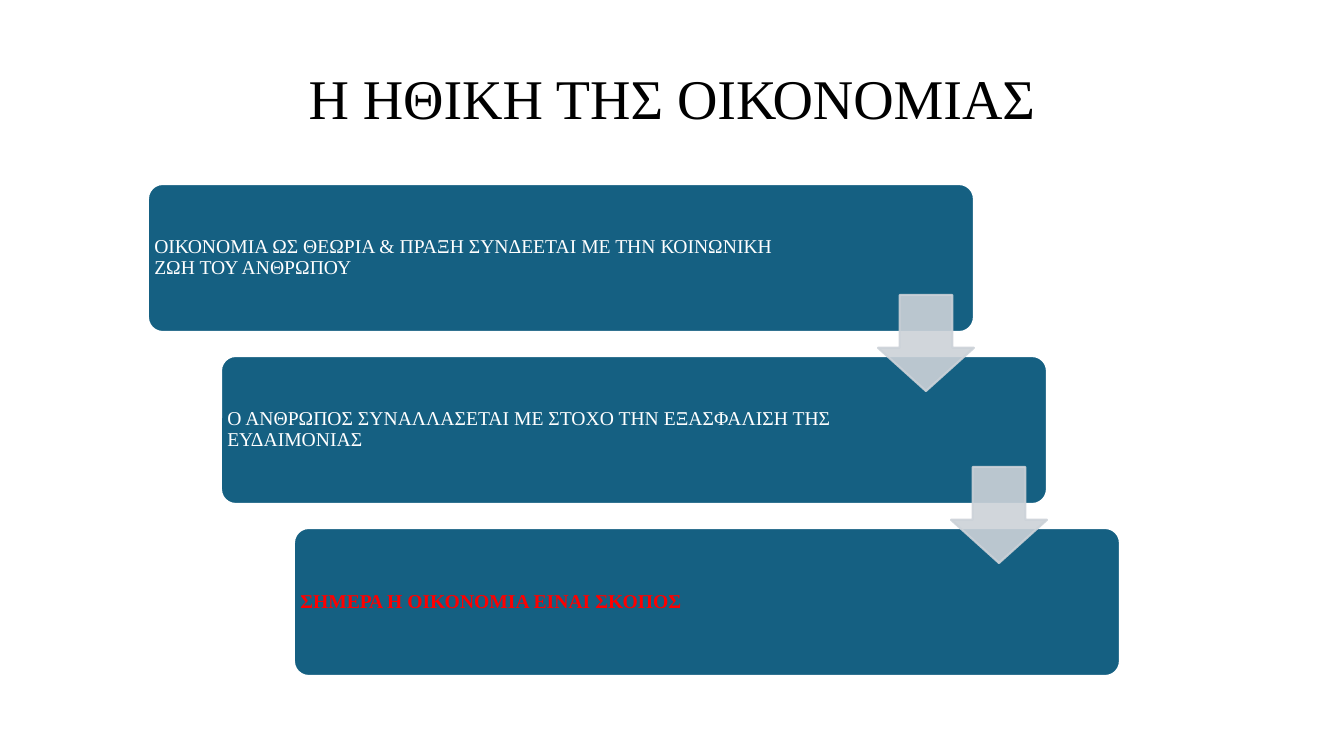
import pptx
import pptx.util
import pptx.dml.color
import pptx.enum.shapes
import pptx.enum.text
import pptx.oxml.ns
import lxml.etree

TITLE = "Η ΗΘΙΚΗ ΤΗΣ ΟΙΚΟΝΟΜΙΑΣ"
# text, colour, bold
STEPS = [
    ("ΟΙΚΟΝΟΜΙΑ ΩΣ ΘΕΩΡΙΑ & ΠΡΑΞΗ ΣΥΝΔΕΕΤΑΙ ΜΕ ΤΗΝ ΚΟΙΝΩΝΙΚΗ ΖΩΗ ΤΟΥ ΑΝΘΡΩΠΟΥ", "FFFFFF", False),
    ("Ο ΑΝΘΡΩΠΟΣ ΣΥΝΑΛΛΑΣΕΤΑΙ ΜΕ ΣΤΟΧΟ ΤΗΝ ΕΞΑΣΦΑΛΙΣΗ ΤΗΣ ΕΥΔΑΙΜΟΝΙΑΣ", "FFFFFF", False),
    ("ΣΗΜΕΡΑ Η ΟΙΚΟΝΟΜΙΑ ΕΙΝΑΙ ΣΚΟΠΟΣ", "FF0000", True),
]

FONT = "Times New Roman"
BOX_COLOUR, ARROW_COLOUR = "156082", "CCD2D8"
LEFT, TOP = 148, 184
STEP_X, STEP_Y = 73, 172
BOX_W, BOX_H = 826, 148
ARROW, ARROW_DROP = 96, 111
TEXT_RIGHT = 171  # keeps the text clear of the arrow

SHAPE = pptx.enum.shapes.MSO_SHAPE
ANCHOR = pptx.enum.text.MSO_ANCHOR
ALIGN = pptx.enum.text.PP_ALIGN


def px(n):
    return pptx.util.Emu(round(n * 914400 / 100.8))


def rgb(colour):
    return pptx.dml.color.RGBColor.from_string(colour)


def add_preset(slide, kind, box, adjustments, fill, line):
    s = slide.shapes.add_shape(kind, *map(px, box))
    s.shadow.inherit = False
    for i, value in enumerate(adjustments):
        s.adjustments[i] = value
    s.fill.solid()
    s.fill.fore_color.rgb = rgb(fill)
    s.line.color.rgb = rgb(line)
    s.line.width = pptx.util.Pt(1.5)
    return s


def write(s, text, size, colour, align, anchor, bold=False):
    tf = s.text_frame
    tf.word_wrap = True
    tf.vertical_anchor = anchor
    tf.text = text
    p = tf.paragraphs[0]
    p.alignment = align
    p.line_spacing = 0.9
    font = p.runs[0].font
    font.name = FONT
    font.size = pptx.util.Pt(size)
    font.bold = bold
    font.color.rgb = rgb(colour)


def make_translucent(s, percent):
    """Set the opacity of the fill and the line."""
    qn = pptx.oxml.ns.qn
    for colour in s._element.spPr.iter(qn("a:srgbClr")):
        lxml.etree.SubElement(colour, qn("a:alpha")).set("val", str(percent * 1000))


def main():
    prs = pptx.Presentation()
    prs.slide_width, prs.slide_height = px(1344), px(756)
    slide = prs.slides.add_slide(prs.slide_layouts[6])

    title = slide.shapes.add_textbox(px(168), px(38), px(1008), px(99))
    write(title, TITLE, 40, "000000", ALIGN.CENTER, ANCHOR.BOTTOM)

    corners = [(LEFT + i * STEP_X, TOP + i * STEP_Y) for i in range(len(STEPS))]
    for (x, y), (text, colour, bold) in zip(corners, STEPS):
        s = add_preset(slide, SHAPE.ROUNDED_RECTANGLE, (x, y, BOX_W, BOX_H),
                       [0.1], BOX_COLOUR, "FFFFFF")
        write(s, text, 14, colour, ALIGN.LEFT, ANCHOR.MIDDLE, bold)
        s.text_frame.margin_left = px(2)
        s.text_frame.margin_right = px(TEXT_RIGHT)

    for x, y in corners[:-1]:
        box = (x + BOX_W - ARROW, y + ARROW_DROP, ARROW, ARROW)
        s = add_preset(slide, SHAPE.DOWN_ARROW, box, [0.55, 0.45], ARROW_COLOUR, ARROW_COLOUR)
        make_translucent(s, 90)

    prs.save("out.pptx")


if __name__ == "__main__":
    main()
